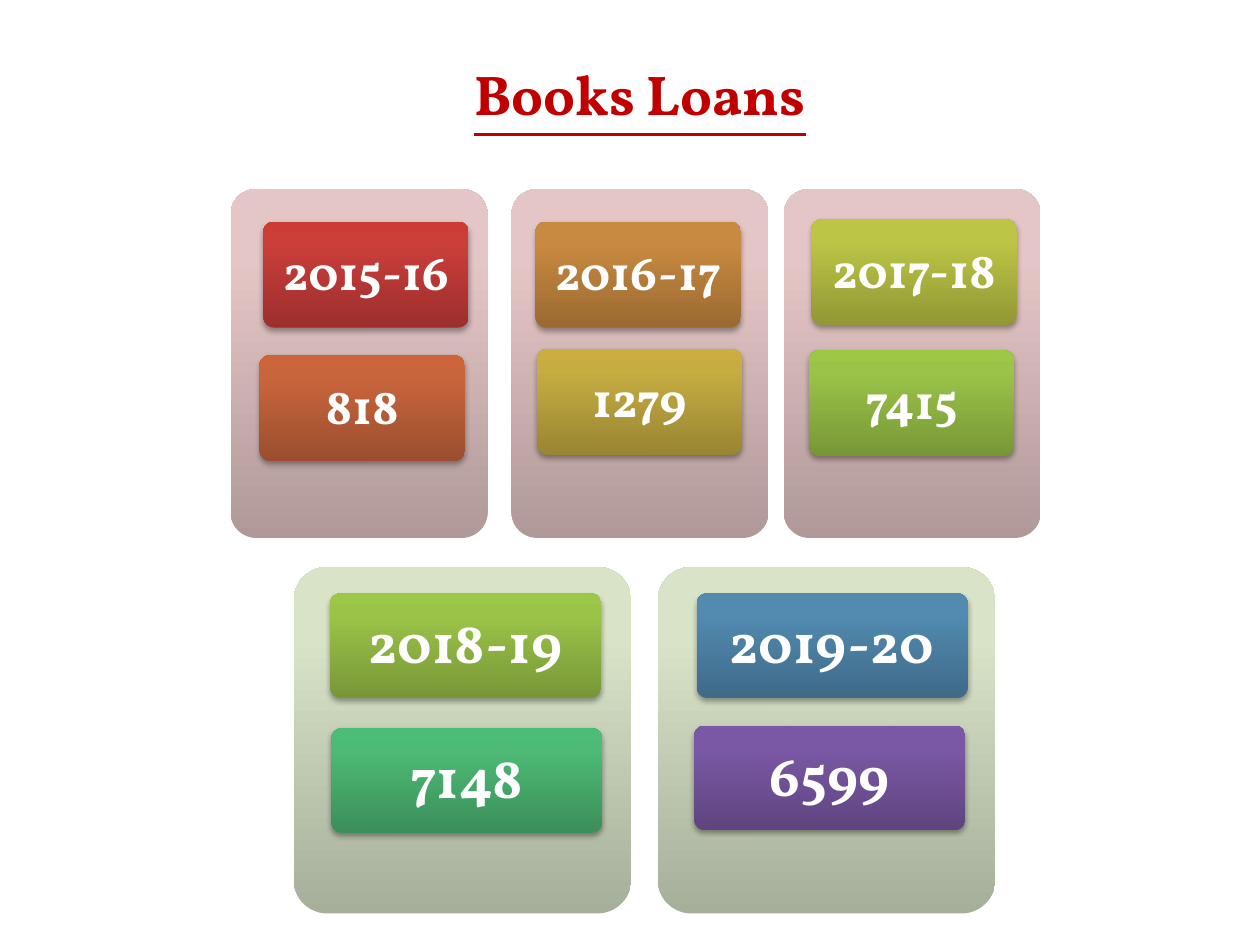
from lxml.etree import SubElement
from pptx import Presentation
from pptx.dml.color import RGBColor
from pptx.enum.shapes import MSO_SHAPE
from pptx.enum.text import MSO_ANCHOR, PP_ALIGN
from pptx.oxml.ns import qn
from pptx.util import Inches, Pt

FONT = "Vollkorn"
COLORS = {"title": "C00000", "label": "FFFFFF", "shadow": "000000"}
# Gradient stops from bottom to top, at 0, 80 and 100 percent
GRADIENTS = {
    "rose": ("B09998", "E5C6C6", "E6C7C6"),
    "sage": ("A6AF9A", "D8E3C8", "D9E4C8"),
    "red": ("9C2F2D", "CB3E3A", "CE3B37"),
    "rust": ("9B4E2F", "C9653D", "CD643A"),
    "orange": ("9A6A31", "C88A40", "CB8B3D"),
    "gold": ("998533", "C6AD42", "CAAF40"),
    "olive": ("919835", "BCC545", "BFC843"),
    "lime": ("779737", "9BC348", "9DC746"),
    "green": ("3B8F5A", "4DBA75", "4BBD75"),
    "blue": ("3F6A88", "528AB0", "518BB3"),
    "purple": ("5F4480", "7B58A6", "7C57A8"),
}
# Each row: panel format, then per panel its left edge and its tiles
# (left, top, text, gradient)
ROWS = [
    ({"top": 1.5, "size": (2.04, 2.77), "gradient": "rose",
      "tile": (1.63, 0.84), "font": 28},
     [(1.83, [(2.09, 1.76, "2015-16", "red"), (2.06, 2.82, "818", "rust")]),
      (4.06, [(4.25, 1.76, "2016-17", "orange"), (4.26, 2.77, "1279", "gold")]),
      (6.22, [(6.44, 1.74, "2017-18", "olive"), (6.42, 2.78, "7415", "lime")])]),
    ({"top": 4.5, "size": (2.68, 2.75), "gradient": "sage",
      "tile": (2.15, 0.83), "font": 32},
     [(2.33, [(2.62, 4.71, "2018-19", "lime"), (2.63, 5.78, "7148", "green")]),
      (5.22, [(5.53, 4.71, "2019-20", "blue"), (5.51, 5.76, "6599", "purple")])]),
]


def format_text(frame, text, size, color, anchor, underline=False):
    frame.text = text
    frame.word_wrap = True
    frame.vertical_anchor = anchor
    paragraph = frame.paragraphs[0]
    paragraph.alignment = PP_ALIGN.CENTER
    font = paragraph.runs[0].font
    formats = {"name": FONT, "size": Pt(size), "bold": True, "underline": underline}
    for attribute, value in formats.items():
        setattr(font, attribute, value)
    font.color.rgb = RGBColor.from_string(COLORS[color])
    return paragraph


def fill_gradient(shape, name):
    """Fill with three stops running upwards."""
    shape.fill.gradient()
    shape.fill.gradient_angle = 90
    stops = shape._element.spPr.find(".//" + qn("a:gsLst"))
    for stop in list(stops):
        stops.remove(stop)
    for position, color in zip((0, 80, 100), GRADIENTS[name]):
        stop = SubElement(stops, qn("a:gs"), pos=str(position * 1000))
        SubElement(stop, qn("a:srgbClr"), val=color)


def add_shadow(shape):
    effects = shape._element.spPr.find(qn("a:effectLst"))
    shadow = SubElement(effects, qn("a:outerShdw"), blurRad=str(Pt(3.1)),
                        dist=str(Pt(1.8)), dir="5400000", rotWithShape="0")
    color = SubElement(shadow, qn("a:srgbClr"), val=COLORS["shadow"])
    SubElement(color, qn("a:alpha"), val="35000")


def add_rounded(slide, left, top, size, gradient):
    shape = slide.shapes.add_shape(
        MSO_SHAPE.ROUNDED_RECTANGLE, *(Inches(n) for n in (left, top, *size)))
    shape.adjustments[0] = 0.1
    shape.shadow.inherit = False
    shape.line.fill.background()
    fill_gradient(shape, gradient)
    return shape


def add_tile(slide, left, top, text, gradient, size, font_size):
    tile = add_rounded(slide, left, top, size, gradient)
    add_shadow(tile)
    paragraph = format_text(tile.text_frame, text, font_size, "label", MSO_ANCHOR.MIDDLE)
    paragraph.line_spacing = 0.9


def add_title(slide, text):
    title = slide.shapes.title
    box = {"left": 1.58, "top": 0.42, "width": 7, "height": 0.83}
    for attribute, value in box.items():
        setattr(title, attribute, Inches(value))
    format_text(title.text_frame, text, 32, "title", MSO_ANCHOR.TOP, underline=True)


def main():
    presentation = Presentation()
    presentation.slide_width, presentation.slide_height = Inches(10), Inches(7.5)
    slide = presentation.slides.add_slide(presentation.slide_layouts[5])
    add_title(slide, "Books Loans")
    for row, panels in ROWS:
        for panel_left, tiles in panels:
            add_rounded(slide, panel_left, row["top"], row["size"], row["gradient"])
            for tile in tiles:
                add_tile(slide, *tile, row["tile"], row["font"])
    presentation.save("out.pptx")


if __name__ == "__main__":
    main()
